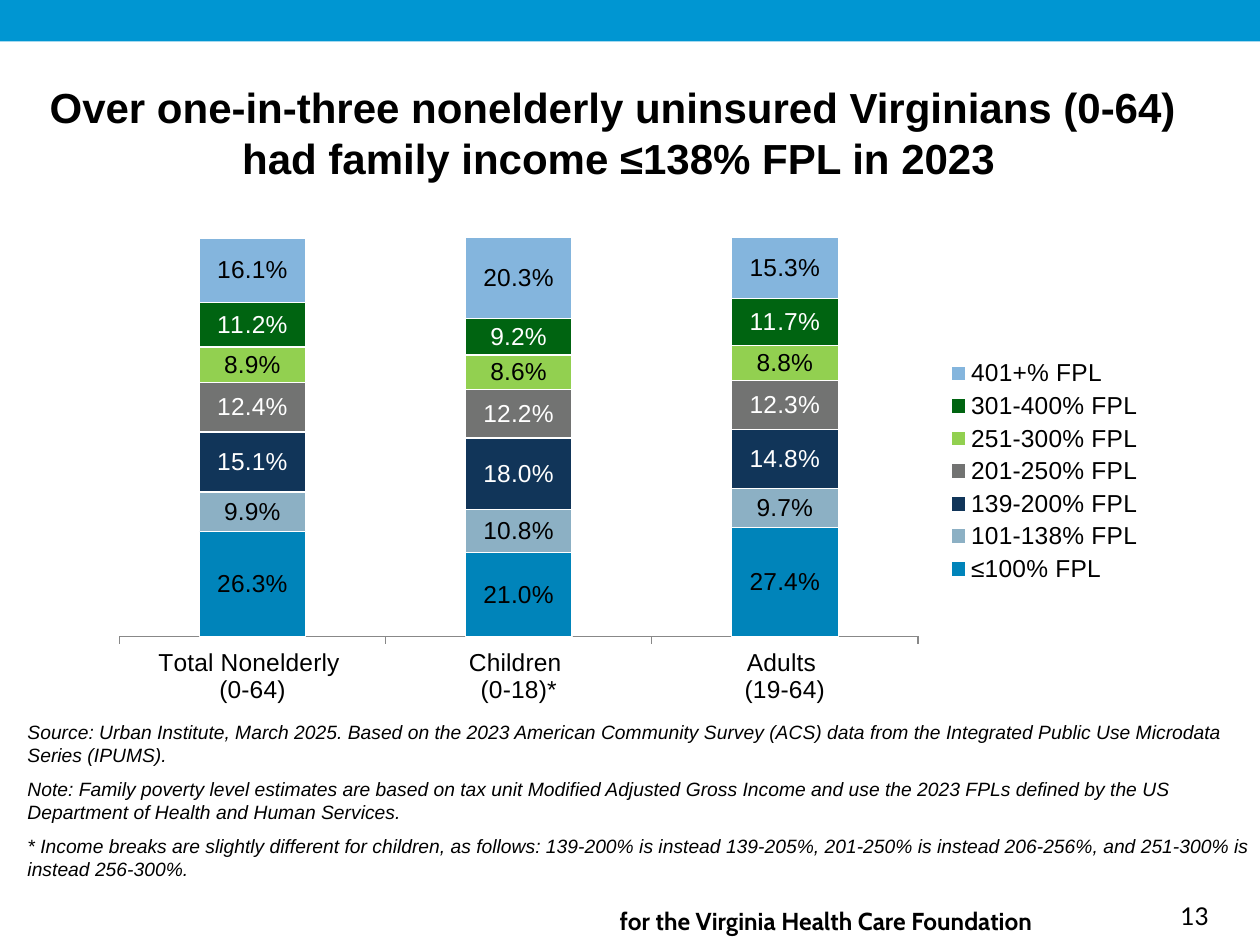
from lxml.etree import SubElement
from pptx import Presentation
from pptx.chart.data import CategoryChartData
from pptx.dml.color import RGBColor
from pptx.enum.chart import XL_CHART_TYPE, XL_LABEL_POSITION, XL_LEGEND_POSITION, XL_TICK_MARK
from pptx.enum.shapes import MSO_SHAPE
from pptx.enum.text import MSO_ANCHOR, PP_ALIGN
from pptx.oxml.ns import qn
from pptx.util import Inches, Pt

BLACK = RGBColor(0x00, 0x00, 0x00)
WHITE = RGBColor(0xFF, 0xFF, 0xFF)
BANNER_BLUE = RGBColor(0x00, 0x96, 0xD2)
AXIS_GRAY = RGBColor(0x88, 0x88, 0x88)

SLIDE_WIDTH, SLIDE_HEIGHT = Inches(10), Inches(7.5)

TITLE_LINES = ["Over one-in-three nonelderly uninsured Virginians (0-64) ",
               "had family income ≤138% FPL in 2023"]
NOTES = [
    "Source: Urban Institute, March 2025. Based on the 2023 American Community Survey (ACS) data "
    "from the Integrated Public Use Microdata Series (IPUMS).",
    "Note: Family poverty level estimates are based on tax unit Modified Adjusted Gross Income "
    "and use the 2023 FPLs defined by the US Department of Health and Human Services.",
    "* Income breaks are slightly different for children, as follows: 139-200% is instead "
    "139-205%, 201-250% is instead 206-256%, and 251-300% is instead 256-300%.",
]
AGE_GROUPS = ["Total Nonelderly \n(0-64)", "Children \n(0-18)*", "Adults \n(19-64)"]
# Income band, share in each age group, bar colour, label colour
INCOME_BANDS = [
    ("≤100% FPL", (0.263, 0.21, 0.274), RGBColor(0x00, 0x84, 0xBA), BLACK),
    ("101-138% FPL ", (0.099, 0.108, 0.097), RGBColor(0x8C, 0xB0, 0xC4), BLACK),
    ("139-200% FPL ", (0.151, 0.18, 0.148), RGBColor(0x11, 0x35, 0x59), WHITE),
    ("201-250% FPL ", (0.124, 0.122, 0.123), RGBColor(0x72, 0x73, 0x72), WHITE),
    ("251-300% FPL ", (0.089, 0.086, 0.088), RGBColor(0x92, 0xD0, 0x50), BLACK),
    ("301-400% FPL ", (0.112, 0.092, 0.117), RGBColor(0x00, 0x64, 0x11), WHITE),
    ("401+% FPL ", (0.161, 0.203, 0.153), RGBColor(0x84, 0xB5, 0xDD), BLACK),
]


def share_box(left, top, width, height):
    """Turn percentages of the slide's size into a box."""
    return (round(SLIDE_WIDTH * left / 100), round(SLIDE_HEIGHT * top / 100),
            round(SLIDE_WIDTH * width / 100), round(SLIDE_HEIGHT * height / 100))


def set_font(font, size, name="Arial", color=BLACK, bold=False, italic=False):
    font.size, font.name = Pt(size), name
    font.bold, font.italic = bold, italic
    font.color.rgb = color


def write_paragraphs(text_frame, lines, alignment=PP_ALIGN.LEFT, space_after=0, **font_style):
    text_frame.word_wrap = True
    text_frame.vertical_anchor = MSO_ANCHOR.TOP
    for index, line in enumerate(lines):
        paragraph = text_frame.add_paragraph() if index else text_frame.paragraphs[0]
        paragraph.alignment = alignment
        paragraph.line_spacing = 1.0
        paragraph.space_before = Pt(0)
        paragraph.space_after = Pt(space_after)
        run = paragraph.add_run()
        run.text = line
        set_font(run.font, **font_style)


def add_banner(slide, box):
    banner = slide.shapes.add_shape(MSO_SHAPE.RECTANGLE, *box)
    banner.shadow.inherit = False
    banner.fill.solid()
    banner.fill.fore_color.rgb = BANNER_BLUE
    banner.line.fill.background()


def place_title(slide, box):
    title = slide.shapes.title
    title.left, title.top, title.width, title.height = box
    write_paragraphs(title.text_frame, TITLE_LINES, PP_ALIGN.CENTER, size=24, bold=True)


def add_text(slide, box, lines, **style):
    text_box = slide.shapes.add_textbox(*box)
    write_paragraphs(text_box.text_frame, lines, **style)


def set_plot_layout(chart, **shares):
    """Fix the inner plot area as shares of the chart's size."""
    plot_area = chart.plots[0]._element.getparent()
    layout = plot_area.find(qn("c:layout"))
    if layout is None:
        layout = plot_area.makeelement(qn("c:layout"))
        plot_area.insert(0, layout)
    manual = SubElement(layout, qn("c:manualLayout"))
    settings = {"layoutTarget": "inner", "xMode": "edge", "yMode": "edge", **shares}
    for tag, value in settings.items():
        SubElement(manual, qn(f"c:{tag}")).set("val", str(value))


def style_series(series, color, label_color):
    series.format.fill.solid()
    series.format.fill.fore_color.rgb = color
    series.format.line.color.rgb = WHITE
    series.format.line.width = Pt(0.75)
    labels = series.data_labels
    labels.show_value = True
    labels.number_format, labels.number_format_is_linked = "0.0%", False
    labels.position = XL_LABEL_POSITION.CENTER
    set_font(labels.font, 14, color=label_color)


def add_income_chart(slide, box):
    chart_data = CategoryChartData(number_format="0.0%")
    chart_data.categories = AGE_GROUPS
    for name, values, _, _ in INCOME_BANDS:
        chart_data.add_series(name, values)
    chart = slide.shapes.add_chart(XL_CHART_TYPE.COLUMN_STACKED, *box, chart_data).chart
    chart.has_title = False
    set_font(chart.font, 14)
    set_plot_layout(chart, x=0.02, y=0.02, w=0.75, h=0.82)

    # Stacked bars
    plot = chart.plots[0]
    plot.gap_width, plot.overlap = 150, 100
    plot.vary_by_categories = False
    for series, (_, _, color, label_color) in zip(plot.series, INCOME_BANDS):
        style_series(series, color, label_color)

    # Axes
    value_axis = chart.value_axis
    value_axis.minimum_scale, value_axis.maximum_scale = 0, 1
    value_axis.major_unit = 0.25
    value_axis.has_major_gridlines = False
    value_axis.visible = False
    category_axis = chart.category_axis
    category_axis.major_tick_mark = XL_TICK_MARK.OUTSIDE
    category_axis.format.line.color.rgb = AXIS_GRAY
    category_axis.format.line.width = Pt(0.75)
    set_font(category_axis.tick_labels.font, 14)

    # Legend
    chart.has_legend = True
    chart.legend.position = XL_LEGEND_POSITION.RIGHT
    chart.legend.include_in_layout = False
    set_font(chart.legend.font, 14)


def main():
    presentation = Presentation()
    presentation.slide_width, presentation.slide_height = SLIDE_WIDTH, SLIDE_HEIGHT
    slide = presentation.slides.add_slide(presentation.slide_layouts[5])

    add_banner(slide, share_box(0, 0, 100, 4.4))
    place_title(slide, share_box(0, 8, 98.2, 12.13))
    add_income_chart(slide, share_box(7.8, 24.13, 84.5, 51.47))
    # Source notes, footer and slide number
    add_text(slide, share_box(1.2, 75.6, 100, 18.4), NOTES, space_after=6, size=11, italic=True)
    add_text(slide, share_box(48.2, 95.2, 48.5, 3.47),
             ["for the Virginia Health Care Foundation"], size=14, name="Cabin", bold=True)
    add_text(slide, share_box(92.7, 94.67, 7.3, 4.53), ["13"], size=14, name="Lato")

    presentation.save("out.pptx")


if __name__ == "__main__":
    main()
